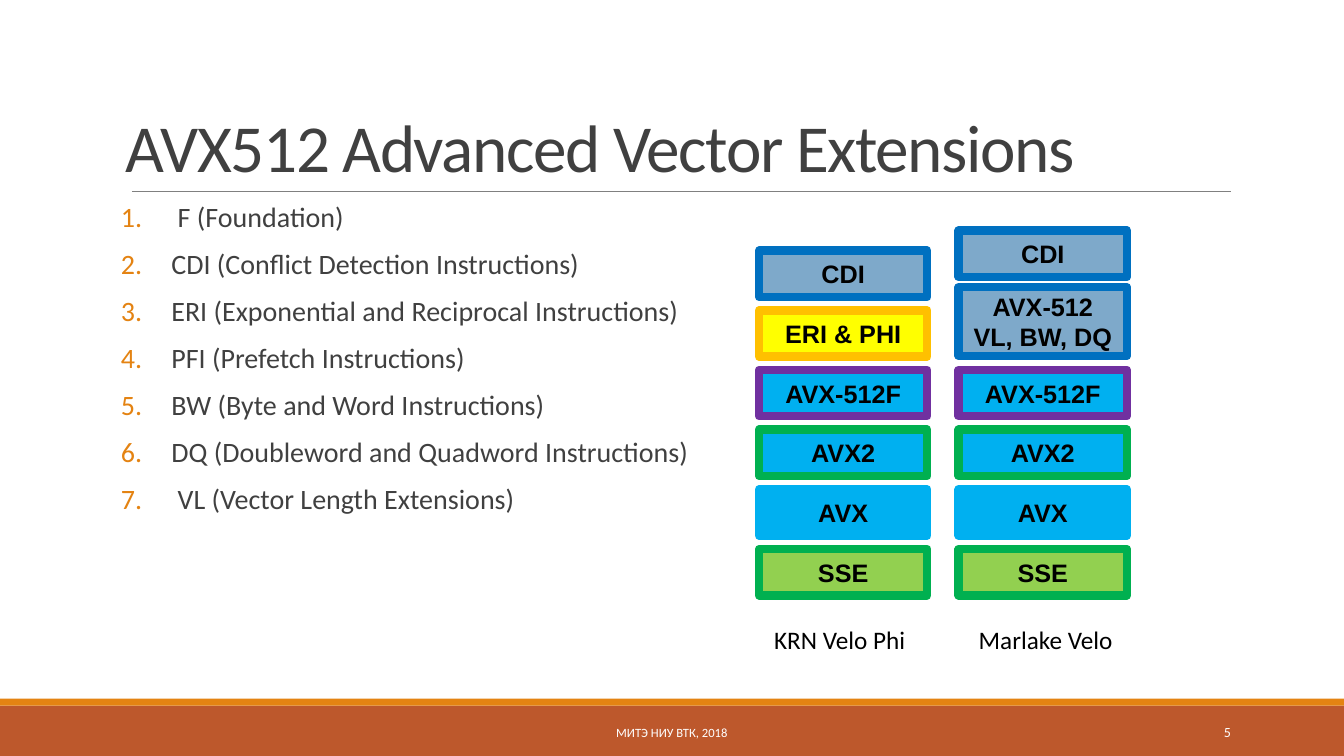
from lxml.etree import SubElement
from pptx import Presentation
from pptx.dml.color import RGBColor
from pptx.enum.shapes import MSO_CONNECTOR, MSO_SHAPE
from pptx.enum.text import MSO_ANCHOR, MSO_AUTO_SIZE, PP_ALIGN
from pptx.oxml.ns import qn
from pptx.util import Pt

TITLE = "AVX512 Advanced Vector Extensions"
ITEMS = [
    " F (Foundation)",
    "CDI (Conflict Detection Instructions)",
    "ERI (Exponential and Reciprocal Instructions)",
    "PFI (Prefetch Instructions)",
    "BW (Byte and Word Instructions)",
    "DQ (Doubleword and Quadword Instructions)",
    " VL (Vector Length Extensions)",
]
# Blocks run from the bottom up: text, fill, line
BASE = [
    ("SSE", "lime", "green"),
    ("AVX", "sky", "sky"),
    ("AVX2", "sky", "green"),
    ("AVX-512F", "sky", "purple"),
]
# Upper blocks add their top and height
STACKS = [
    (542.2, 549.4, "KRN Velo Phi", [
        ("ERI & PHI", "yellow", "gold", 221.7, 33.1),
        ("CDI", "steel", "blue", 179.1, 33.1),
    ]),
    (684.8, 695.5, "Marlake Velo", [
        ("AVX-512\nVL, BW, DQ", "steel", "blue", 205.2, 49),
        ("CDI", "steel", "blue", 164.7, 33.1),
    ]),
]
FOOTER = "МИТЭ НИУ ВТК, 2018"
NUMBER = "5"

COLORS = {
    "rust": "BD582C", "orange": "E48312", "rule": "808080", "dark": "404040",
    "white": "FFFFFF", "black": "000000", "steel": "7EA9CA", "blue": "0070C0",
    "yellow": "FFFF00", "gold": "FFC000", "sky": "00B0F0", "purple": "7030A0",
    "green": "00B050", "lime": "92D050",
}
WIDE, HIGH = 960, 540
BLOCK_W, BLOCK_H, PITCH, BASE_TOP = 120.2, 33.1, 42.65, 392.2


def color(name):
    return RGBColor.from_string(COLORS[name])


def apply(target, values):
    for name, value in values.items():
        setattr(target, name, value)


def place(shape, left, top, width, height):
    apply(shape, {"left": Pt(left), "top": Pt(top),
                  "width": Pt(width), "height": Pt(height)})


def write(shape, text, size, tint, align=PP_ALIGN.LEFT, font="Calibri",
          bold=False, inset=3.6, anchor=MSO_ANCHOR.MIDDLE, wrap=True):
    frame = shape.text_frame
    frame.text = text
    apply(frame, {"word_wrap": wrap, "auto_size": MSO_AUTO_SIZE.NONE,
                  "vertical_anchor": anchor})
    for side in ("left", "top", "right", "bottom"):
        setattr(frame, "margin_" + side, Pt(inset))
    for para in frame.paragraphs:
        para.alignment = align
        for run in para.runs:
            apply(run.font, {"name": font, "size": Pt(size), "bold": bold})
            run.font.color.rgb = color(tint)
    return frame


def add_box(slide, area, fill, line=None):
    box = slide.shapes.add_shape(MSO_SHAPE.RECTANGLE, *map(Pt, area))
    box.shadow.inherit = False
    box.fill.solid()
    box.fill.fore_color.rgb = color(fill)
    if line:
        box.line.color.rgb = color(line)
        box.line.width = Pt(6)
    else:
        box.line.fill.background()
    return box


def add_text(slide, area, *args, **style):
    return write(slide.shapes.add_textbox(*map(Pt, area)), *args, **style)


def add_frame(slide):
    """Draw the bands at the foot and the rule under the title."""
    add_box(slide, (0, 504, WIDE, 36), "rust")
    add_box(slide, (0, 499, WIDE, 5), "orange")
    rule = slide.shapes.add_connector(
        MSO_CONNECTOR.STRAIGHT, Pt(94.3), Pt(136.8), Pt(879), Pt(136.8))
    rule.line.color.rgb = color("rule")
    rule.line.width = Pt(0.5)
    SubElement(rule._element.spPr, qn("a:effectLst"))
    add_text(slide, (293.8, 514.8, 372.2, 16.6), FOOTER, 9, "white",
             PP_ALIGN.CENTER)
    add_text(slide, (869.8, 514, 13, 18), NUMBER, 10, "white",
             PP_ALIGN.RIGHT, wrap=False)


def fill_title(shape):
    place(shape, 86.4, 22.3, 792, 114.5)
    frame = write(shape, TITLE, 48, "dark", anchor=MSO_ANCHOR.BOTTOM)
    para = frame.paragraphs[0]
    para.line_spacing = 0.85
    para.runs[0].font._element.set("spc", "-100")


def fill_list(shape):
    place(shape, 86.4, 145.4, 421.2, 316.8)
    frame = write(shape, "\n".join(ITEMS), 20, "dark", inset=0,
                  anchor=MSO_ANCHOR.TOP)
    for para in frame.paragraphs:
        apply(para, {"line_spacing": 0.9, "space_before": Pt(12),
                     "space_after": Pt(0)})
        props = para._p.get_or_add_pPr()
        props.set("marL", str(Pt(36)))
        props.set("indent", str(-Pt(36)))
        tint = SubElement(props, qn("a:buClr"))
        SubElement(tint, qn("a:srgbClr"), val=COLORS["orange"])
        SubElement(props, qn("a:buFont"), typeface="+mj-lt")
        SubElement(props, qn("a:buAutoNum"), type="arabicPeriod")


def add_stack(slide, left, label_x, label, upper):
    base = [(*block, BASE_TOP - row * PITCH, BLOCK_H)
            for row, block in enumerate(BASE)]
    for text, fill, line, top, height in base + upper:
        box = add_box(slide, (left, top, BLOCK_W, height), fill, line)
        write(box, text, 18, "black", PP_ALIGN.CENTER, "Arial", True)
    add_text(slide, (label_x, 442.1, 105.1, 26), label, 18, "black",
             anchor=MSO_ANCHOR.TOP, wrap=False)


def main():
    deck = Presentation()
    apply(deck, {"slide_width": Pt(WIDE), "slide_height": Pt(HIGH)})
    slide = deck.slides.add_slide(deck.slide_layouts[1])
    add_frame(slide)
    fill_title(slide.shapes.title)
    fill_list(slide.placeholders[1])
    for stack in STACKS:
        add_stack(slide, *stack)
    deck.save("out.pptx")


if __name__ == "__main__":
    main()
